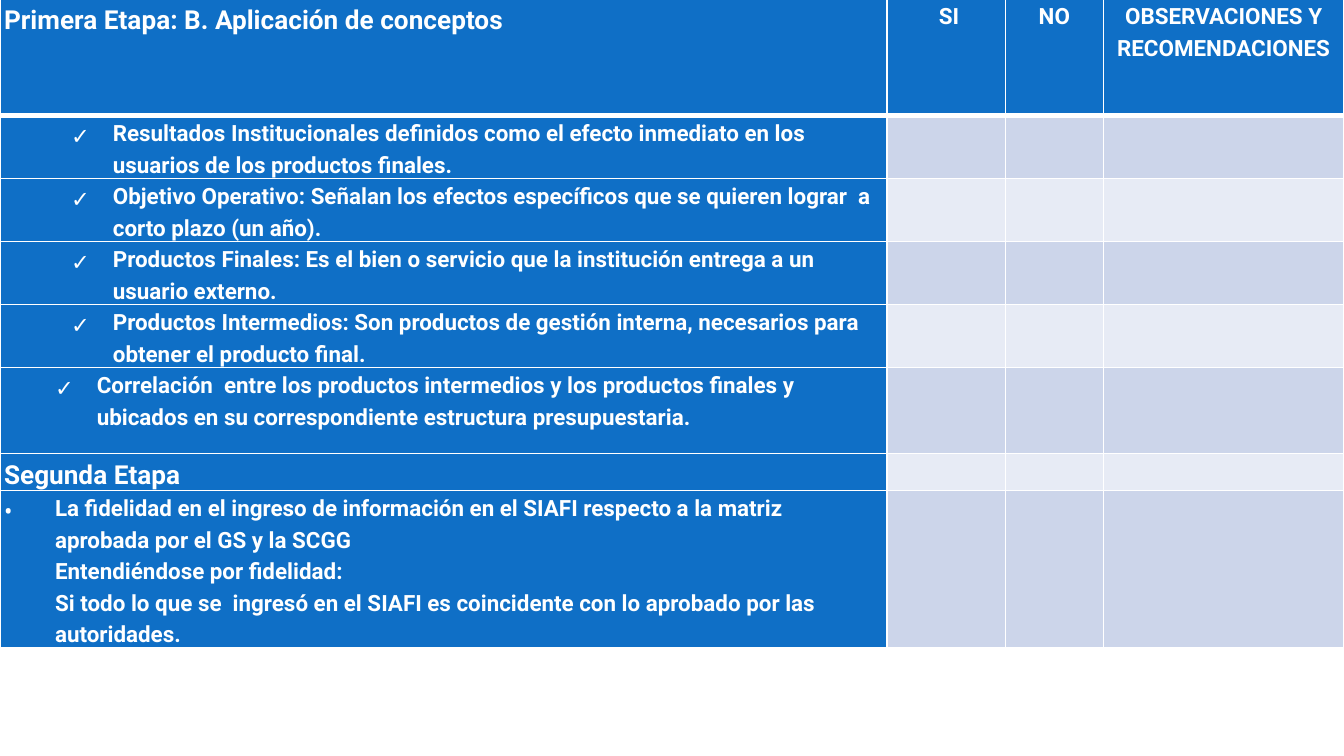
from lxml import etree
from pptx import Presentation
from pptx.dml.color import RGBColor
from pptx.enum.text import PP_ALIGN
from pptx.oxml.ns import qn
from pptx.util import Inches, Pt

CENTER = PP_ALIGN.CENTER
BLANK_LAYOUT = 6

THEME = {
    "font": "Roboto",
    "bullet_font": "Noto Sans Symbols",
    "blue": RGBColor.from_string("0F6FC6"),
    "white": RGBColor.from_string("FFFFFF"),
    "bands": [RGBColor.from_string("CCD5EA"), RGBColor.from_string("E7EBF5")],
    "heading": Pt(14),
    "body": Pt(12),
    "thin": Pt(1),
    "thick": Pt(3),
}
CELL_FORMAT = {
    "margin_left": Inches(0.03),
    "margin_right": Inches(0.03),
    "margin_top": 0,
    "margin_bottom": 0,
}
COLUMN_WIDTHS = [6.6, 0.88, 0.73, 1.79]
HEADERS = [" SI", "NO", "OBSERVACIONES Y RECOMENDACIONES"]

# Height, text, size, bullet, level, left indent, hanging indent
CRITERIA = [
    (0.87, "Primera Etapa: B. Aplicación de conceptos", "heading", None, 0, 0, 0),
    (0.43, "Resultados Institucionales definidos como el efecto inmediato en los "
           "usuarios de los productos finales.", "body", "✓", 1, 0.81, 0.31),
    (0.42, "Objetivo Operativo: Señalan los efectos específicos que se quieren lograr  a "
           "corto plazo (un año).", "body", "✓", 1, 0.81, 0.31),
    (0.42, "Productos Finales: Es el bien o servicio que la institución entrega a un "
           "usuario externo.", "body", "✓", 1, 0.81, 0.31),
    (0.43, "Productos Intermedios: Son productos de gestión interna, necesarios para "
           "obtener el producto final.", "body", "✓", 1, 0.81, 0.31),
    (0.64, "Correlación  entre los productos intermedios y los productos finales y "
           "ubicados en su correspondiente estructura presupuestaria.",
     "body", "✓", 1, 0.69, 0.31),
    (0.22, "Segunda Etapa", "heading", None, 0, 0, 0),
    (1.08, "La fidelidad en el ingreso de información en el SIAFI respecto a la matriz "
           "aprobada por el GS y la SCGG\n"
           "Entendiéndose por fidelidad: \n"
           "Si todo lo que se  ingresó en el SIAFI es coincidente con lo aprobado por las "
           "autoridades.", "body", "•", 0, 0.38, 0.38),
]


def format_cell(cell, fill, top, bottom):
    """Set margins, borders and fill; top and bottom are border widths."""
    for name, value in CELL_FORMAT.items():
        setattr(cell, name, value)
    properties = cell._tc.get_or_add_tcPr()
    widths = {"L": THEME["thin"], "R": THEME["thin"], "T": top, "B": bottom}
    for side, width in widths.items():
        line = etree.SubElement(properties, qn(f"a:ln{side}"), w=str(width))
        line_fill = etree.SubElement(line, qn("a:solidFill"))
        etree.SubElement(line_fill, qn("a:srgbClr"), val=str(THEME["white"]))
    cell.fill.solid()
    cell.fill.fore_color.rgb = fill


def write_text(paragraph, text, size):
    paragraph.text = text
    paragraph.line_spacing = 1.2
    for run in paragraph.runs:
        for name, value in {"name": THEME["font"], "size": size, "bold": True}.items():
            setattr(run.font, name, value)
        run.font.color.rgb = THEME["white"]
    for line_break in paragraph._p.findall(qn("a:br")):
        etree.SubElement(line_break, qn("a:rPr"), sz=str(int(size.pt * 100)))


presentation = Presentation()
presentation.slide_width = Inches(10)
presentation.slide_height = presentation.slide_width * 9 // 16
slide = presentation.slides.add_slide(presentation.slide_layouts[BLANK_LAYOUT])

table = slide.shapes.add_table(
    len(CRITERIA), len(COLUMN_WIDTHS),
    Inches(0), Inches(-0.01), Inches(10), Inches(4.91),
).table
for column, width in zip(table.columns, COLUMN_WIDTHS):
    column.width = Inches(width)

for row_index, (height, text, size, bullet, level, indent, hanging) in enumerate(CRITERIA):
    row = table.rows[row_index]
    row.height = Inches(height)
    is_header = row_index == 0
    top = THEME["thick"] if row_index == 1 else THEME["thin"]
    bottom = THEME["thick"] if is_header else THEME["thin"]
    band = THEME["blue"] if is_header else THEME["bands"][(row_index - 1) % 2]

    for column_index, cell in enumerate(row.cells):
        format_cell(cell, THEME["blue"] if column_index == 0 else band, top, bottom)
        paragraph = cell.text_frame.paragraphs[0]
        if column_index == 0:
            write_text(paragraph, text, THEME[size])
            paragraph.level = level
            if bullet:
                properties = paragraph._p.get_or_add_pPr()
                properties.set("marL", str(Inches(indent)))
                properties.set("indent", str(-Inches(hanging)))
                etree.SubElement(properties, qn("a:buFont"), typeface=THEME["bullet_font"])
                etree.SubElement(properties, qn("a:buChar"), char=bullet)
        elif is_header:
            write_text(paragraph, HEADERS[column_index - 1], THEME["body"])
            paragraph.alignment = CENTER
        else:
            # Keeps the default type size from stretching the row
            etree.SubElement(paragraph._p, qn("a:endParaRPr"), sz="1200")

presentation.save("out.pptx")
